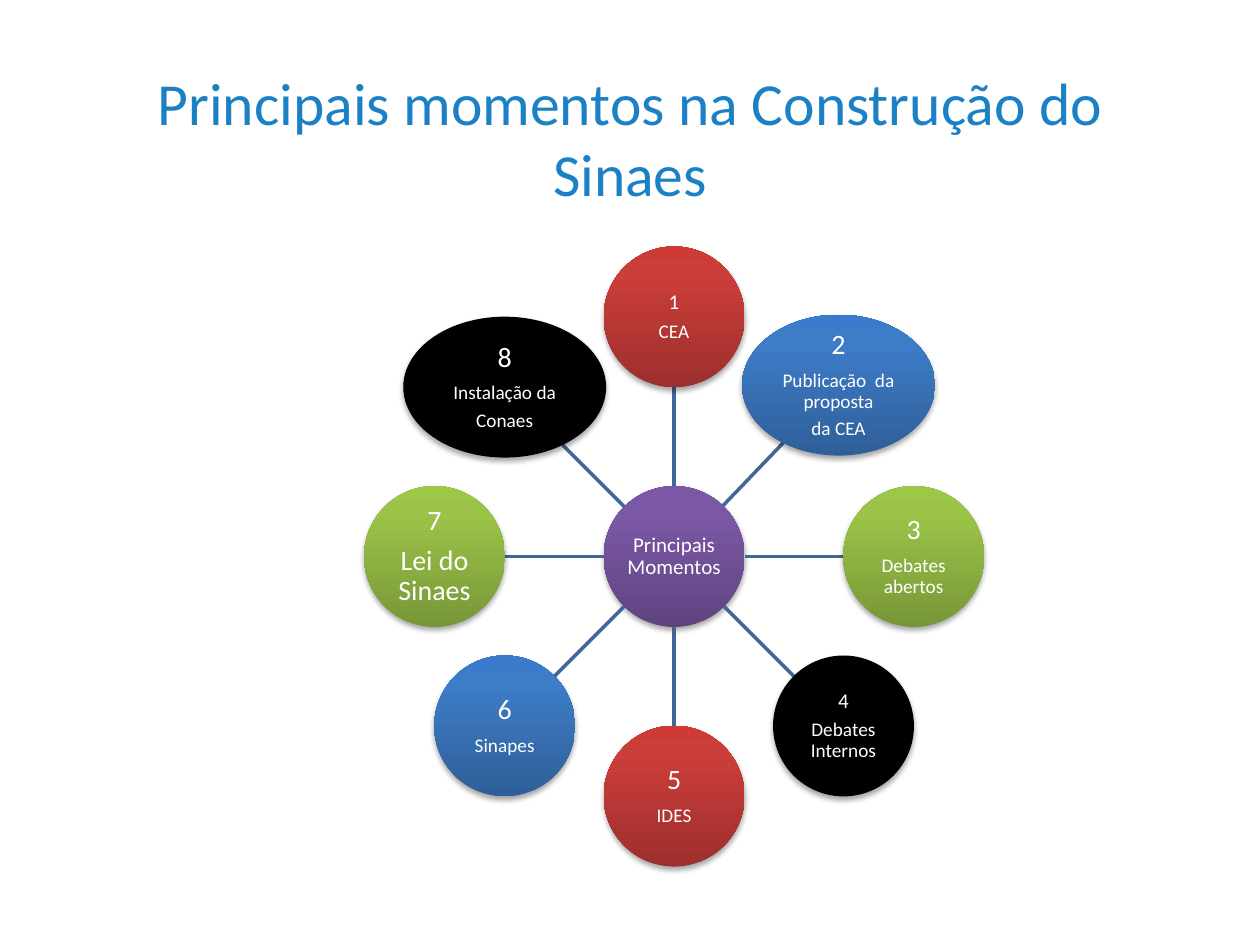
"""Build the hub-and-spoke slide of the main moments in the making of Sinaes."""
import copy
import math

import lxml.etree
import pptx
import pptx.dml.color
import pptx.enum.shapes
import pptx.enum.text
import pptx.oxml.ns
import pptx.util

Cm, Pt = pptx.util.Cm, pptx.util.Pt
RGBColor = pptx.dml.color.RGBColor
qn = pptx.oxml.ns.qn

TITLE_BLUE = RGBColor(0x1C, 0x81, 0xC4)
SPOKE_BLUE = RGBColor(0x3F, 0x67, 0x97)
WHITE = RGBColor(0xFF, 0xFF, 0xFF)
BLACK = (RGBColor(0, 0, 0),)
PURPLE = (RGBColor(0x5F, 0x44, 0x80), RGBColor(0x7B, 0x58, 0xA6), RGBColor(0x7C, 0x57, 0xA8))
RED = (RGBColor(0x9C, 0x2F, 0x2D), RGBColor(0xCB, 0x3E, 0x3A), RGBColor(0xCE, 0x3B, 0x37))
BLUE = (RGBColor(0x2F, 0x5F, 0x99), RGBColor(0x3D, 0x7C, 0xC7), RGBColor(0x3A, 0x7C, 0xCB))
GREEN = (RGBColor(0x77, 0x97, 0x37), RGBColor(0x9B, 0xC3, 0x48), RGBColor(0x9D, 0xC7, 0x46))

HUB_X, HUB_Y = 13.59, 11.22
RING = 4.83
DIAMETER = 2.84

# Clockwise from the top: lines with sizes, colours, width, shift from the ring
MOMENTS = [
    ([("1", 12), ("CEA", 11)], RED, DIAMETER, (0, 0)),
    ([("2", 16), ("Publicação  da proposta", 11), ("da CEA", 11)], BLUE, 3.89, (-0.1, -0.04)),
    ([("3", 16), ("Debates abertos", 11)], GREEN, DIAMETER, (0, 0)),
    ([("4", 12), ("Debates Internos", 11)], BLACK, DIAMETER, (0, 0)),
    ([("5", 16), ("IDES", 11)], RED, DIAMETER, (0, 0)),
    ([("6", 16), ("Sinapes", 11)], BLUE, DIAMETER, (0, 0)),
    ([("7", 16), ("Lei do Sinaes", 16)], GREEN, DIAMETER, (0, 0)),
    ([("8", 16), ("Instalação da", 11), ("Conaes", 11)], BLACK, 4.09, (0, 0)),
]


def write(p, text, size, color=WHITE, line_spacing=1.0, space_after=0):
    """Fill one centred paragraph with formatted text."""
    p.alignment = pptx.enum.text.PP_ALIGN.CENTER
    p.line_spacing = line_spacing
    p.space_after = Pt(space_after)
    r = p.add_run()
    r.text = text
    r.font.name, r.font.size, r.font.color.rgb = "Calibri", Pt(size), color


def add_title(s, text):
    """Place and format the title."""
    sp = s.shapes.title
    sp.left, sp.top, sp.width, sp.height = Cm(1.27), Cm(1.7), Cm(22.86), Cm(2.13)
    tf = sp.text_frame
    tf.auto_size = pptx.enum.text.MSO_AUTO_SIZE.NONE
    tf.vertical_anchor = pptx.enum.text.MSO_ANCHOR.MIDDLE
    write(tf.paragraphs[0], text, 34.1, color=TITLE_BLUE)


def paint(sp, colors):
    """Fill a shape with one colour or a rising three-stop gradient."""
    if len(colors) == 1:
        sp.fill.solid()
        sp.fill.fore_color.rgb = colors[0]
        return
    sp.fill.gradient()
    sp.fill.gradient_angle = 90
    stops = sp._element.spPr.find(qn("a:gradFill")).find(qn("a:gsLst"))
    stops.append(copy.deepcopy(stops[-1]))
    for stop, position, color in zip(sp.fill.gradient_stops, (0, 0.8, 1), colors):
        stop.position = position
        stop.color.rgb = color


def add_shadow(sp):
    """Give a shape a soft shadow below it."""
    sp.shadow.inherit = False
    effects = sp._element.spPr.find(qn("a:effectLst"))
    shadow = lxml.etree.SubElement(effects, qn("a:outerShdw"), blurRad="40000", dist="23000",
                                   dir="5400000", rotWithShape="0")
    black = lxml.etree.SubElement(shadow, qn("a:srgbClr"), val="000000")
    lxml.etree.SubElement(black, qn("a:alpha"), val="35000")


def add_bubble(s, x, y, width, colors, lines):
    """Add a shaded ellipse centred at x, y with its lines of text."""
    sp = s.shapes.add_shape(pptx.enum.shapes.MSO_SHAPE.OVAL, Cm(x - width / 2),
                            Cm(y - DIAMETER / 2), Cm(width), Cm(DIAMETER))
    paint(sp, colors)
    sp.line.fill.background()
    add_shadow(sp)
    tf = sp.text_frame
    tf.word_wrap = True
    tf.vertical_anchor = pptx.enum.text.MSO_ANCHOR.MIDDLE
    tf.margin_left = tf.margin_right = tf.margin_top = tf.margin_bottom = Cm(0.03)
    for i, (text, size) in enumerate(lines):
        p = tf.add_paragraph() if i else tf.paragraphs[0]
        write(p, text, size, line_spacing=0.9, space_after=0.35 * size)


def add_spoke(s, x, y, width):
    """Draw a line from the rim of the hub to the rim of the ellipse at x, y."""
    dx, dy = x - HUB_X, y - HUB_Y
    length = math.hypot(dx, dy)
    ux, uy = dx / length, dy / length
    start = DIAMETER / 2
    end = length - 1 / math.hypot(ux / (width / 2), uy / (DIAMETER / 2))
    c = s.shapes.add_connector(pptx.enum.shapes.MSO_CONNECTOR.STRAIGHT,
                               Cm(HUB_X + start * ux), Cm(HUB_Y + start * uy),
                               Cm(HUB_X + end * ux), Cm(HUB_Y + end * uy))
    c.line.color.rgb = SPOKE_BLUE
    c.line.width = Pt(2)
    lxml.etree.SubElement(c._element.spPr, qn("a:effectLst"))


def main():
    """Build and save the slide."""
    prs = pptx.Presentation()
    prs.slide_width, prs.slide_height = Cm(25.4), Cm(19.05)
    s = prs.slides.add_slide(prs.slide_layouts[5])
    add_title(s, "Principais momentos na Construção do Sinaes")
    add_bubble(s, HUB_X, HUB_Y, DIAMETER, PURPLE, [("Principais Momentos", 12)])
    for i, (lines, colors, width, (shift_x, shift_y)) in enumerate(MOMENTS):
        angle = math.tau * i / len(MOMENTS)
        x = HUB_X + RING * math.sin(angle) + shift_x
        y = HUB_Y - RING * math.cos(angle) + shift_y
        add_spoke(s, x, y, width)
        add_bubble(s, x, y, width, colors, lines)
    prs.save("out.pptx")


if __name__ == "__main__":
    main()
